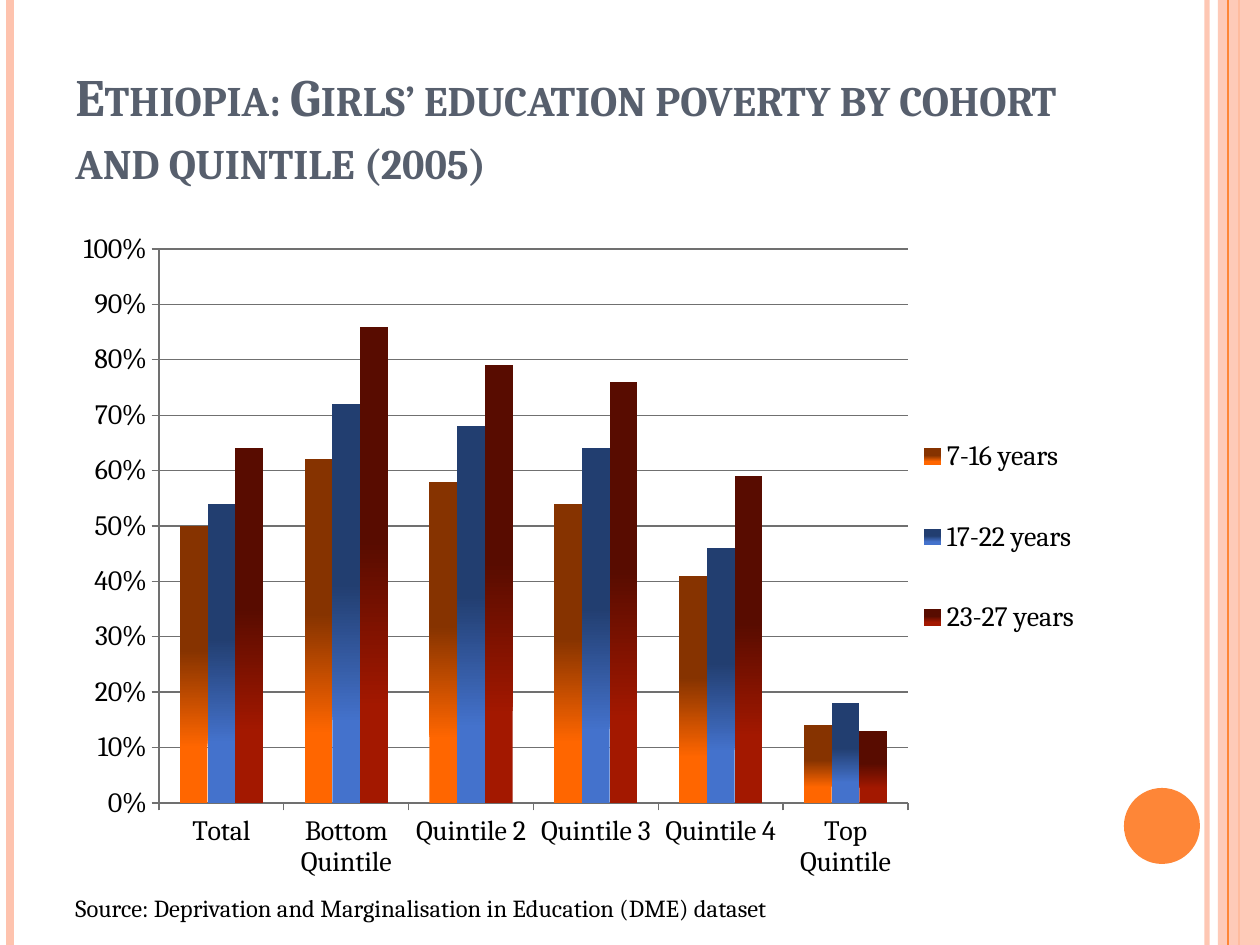
from lxml.etree import SubElement, fromstring
from pptx import Presentation
from pptx.chart.data import CategoryChartData
from pptx.dml.color import RGBColor
from pptx.enum.chart import XL_CHART_TYPE as CT, XL_LEGEND_POSITION as LP, XL_TICK_MARK as TM
from pptx.enum.shapes import MSO_CONNECTOR as MC, MSO_SHAPE as MS
from pptx.enum.text import MSO_ANCHOR as MA
from pptx.oxml.ns import qn
from pptx.util import Pt

FONT = "Cambria"
PEACH = RGBColor(0xFE, 0xC3, 0xAE)
ORANGE = RGBColor(0xFE, 0x86, 0x37)
SLATE = RGBColor(0x57, 0x5F, 0x6D)
GRAY = RGBColor(0x70, 0x70, 0x70)
BLACK = RGBColor(0, 0, 0)
WHITE = RGBColor(0xFF, 0xFF, 0xFF)

TITLE = "Ethiopia: Girls’ education poverty by cohort and quintile (2005)"
SOURCE = "Source: Deprivation and Marginalisation in Education (DME) dataset"
CATEGORIES = ["Total", "Bottom Quintile", "Quintile 2", "Quintile 3", "Quintile 4", "Top Quintile"]
SERIES = [
    ("7-16 years", (0.5, 0.62, 0.58, 0.54, 0.41, 0.14),
     RGBColor(0xFF, 0x66, 0x00), RGBColor(0x86, 0x33, 0x00)),
    ("17-22 years", (0.54, 0.72, 0.68, 0.64, 0.46, 0.18),
     RGBColor(0x44, 0x72, 0xCC), RGBColor(0x22, 0x3E, 0x70)),
    ("23-27 years", (0.64, 0.86, 0.79, 0.76, 0.59, 0.13),
     RGBColor(0xA3, 0x18, 0x00), RGBColor(0x58, 0x0C, 0x00)),
]
WIDTH, HEIGHT = 1260, 945
BACK_RULES = [(1207, PEACH, 3, 93), (10, PEACH, 4.5, 100), (1239, ORANGE, 1.5, 100)]
FRONT_RULES = [(1228, ORANGE, 0.75, 100)]
BAND = (1218, 0, 42, HEIGHT)
DISC = (1124, 788, 76, 76)
TITLE_BOX = (63, 38, 1029, 158)
CHART_BOX = (63, 220, 1029, 672)
PLOT_BOX = (159, 249, 749, 554)
LEGEND_BOX = (932, 392, 154, 290)
SOURCE_BOX = (63, 887, 1040, 43)


def px(n):
    return round(n * 914400 / 126)


def set_alpha(fill, percent):
    color = fill._xPr.find(".//" + qn("a:srgbClr"))
    SubElement(color, qn("a:alpha"), val=str(percent * 1000))


def add_rule(shapes, x, color, width, opacity):
    s = shapes.add_connector(MC.STRAIGHT, px(x), 0, px(x), px(HEIGHT))
    s.line.width = Pt(width)
    s.line.color.rgb = color
    if opacity < 100:
        set_alpha(s.line.fill, opacity)
    SubElement(s._element.spPr, qn("a:effectLst"))


def add_solid(shapes, kind, box, color, opacity=100):
    s = shapes.add_shape(kind, *map(px, box))
    s.shadow.inherit = False
    s.fill.solid()
    s.fill.fore_color.rgb = color
    if opacity < 100:
        set_alpha(s.fill, opacity)
    s.line.fill.background()


def set_font(font, size, color=BLACK, bold=False):
    for name, value in dict(name=FONT, size=Pt(size), bold=bold).items():
        setattr(font, name, value)
    font.color.rgb = color


def add_text(shapes, box, text, size, color=BLACK, bold=False, anchor=MA.TOP):
    tf = shapes.add_textbox(*map(px, box)).text_frame
    tf.word_wrap = True
    tf.vertical_anchor = anchor
    r = tf.paragraphs[0].add_run()
    r.text = text
    set_font(r.font, size, color, bold)
    return r


def make_layout(box, inner=False):
    left, top, width, height = CHART_BOX
    x, y, w, h = box
    values = dict(xMode="edge", yMode="edge", x=(x - left) / width, y=(y - top) / height,
                  w=w / width, h=h / height)
    if inner:
        values = dict(layoutTarget="inner", **values)
    layout = fromstring('<c:layout xmlns:c="http://schemas.openxmlformats.org/drawingml/2006/chart"/>')
    manual = SubElement(layout, qn("c:manualLayout"))
    for name, value in values.items():
        SubElement(manual, qn("c:" + name), val=str(value))
    return layout


def drop_layout(element):
    for old in element.findall(qn("c:layout")):
        element.remove(old)


def add_cohort_chart(shapes):
    data = CategoryChartData(number_format="0%")
    data.categories = CATEGORIES
    for name, values, *_ in SERIES:
        data.add_series(name, values)
    chart = shapes.add_chart(CT.COLUMN_CLUSTERED, *map(px, CHART_BOX), data).chart
    chart.has_title = False
    set_font(chart.font, 16)

    plot = chart.plots[0]
    for name, value in dict(gap_width=150, overlap=0, vary_by_categories=False).items():
        setattr(plot, name, value)
    for series, (_, _, light, dark) in zip(plot.series, SERIES):
        fill = series.format.fill
        fill.gradient()
        fill.gradient_angle = 90
        for stop, color, position in zip(fill.gradient_stops, (light, dark), (0.2, 0.55)):
            stop.color.rgb = color
            stop.position = position

    value_axis = chart.value_axis
    for name, value in dict(minimum_scale=0, maximum_scale=1, major_unit=0.1,
                            has_major_gridlines=True).items():
        setattr(value_axis, name, value)
    value_axis.tick_labels.number_format = "0%"
    value_axis.tick_labels.number_format_is_linked = False
    lines = [value_axis.major_gridlines.format.line]
    for axis in (chart.category_axis, value_axis):
        axis.major_tick_mark = TM.OUTSIDE
        set_font(axis.tick_labels.font, 16)
        lines.append(axis.format.line)
    for line in lines:
        line.color.rgb = GRAY
        line.width = Pt(0.75)

    chart.has_legend = True
    legend = chart.legend
    legend.position = LP.RIGHT
    legend.include_in_layout = False
    set_font(legend.font, 16)
    drop_layout(legend._element)
    legend._element.find(qn("c:legendPos")).addnext(make_layout(LEGEND_BOX))
    area = chart._chartSpace.find(".//" + qn("c:plotArea"))
    drop_layout(area)
    area.insert(0, make_layout(PLOT_BOX, inner=True))


def main():
    prs = Presentation()
    prs.slide_width, prs.slide_height = px(WIDTH), px(HEIGHT)
    slide = prs.slides.add_slide(prs.slide_layouts[6])
    slide.background.fill.solid()
    slide.background.fill.fore_color.rgb = WHITE
    shapes = slide.shapes
    for rule in BACK_RULES:
        add_rule(shapes, *rule)
    add_solid(shapes, MS.RECTANGLE, BAND, PEACH, 87)
    for rule in FRONT_RULES:
        add_rule(shapes, *rule)
    add_solid(shapes, MS.OVAL, DISC, ORANGE)
    title = add_text(shapes, TITLE_BOX, TITLE, 30, SLATE, True, MA.BOTTOM)
    title.font._element.set("cap", "small")
    add_cohort_chart(shapes)
    add_text(shapes, SOURCE_BOX, SOURCE, 14)
    prs.save("out.pptx")


if __name__ == "__main__":
    main()
